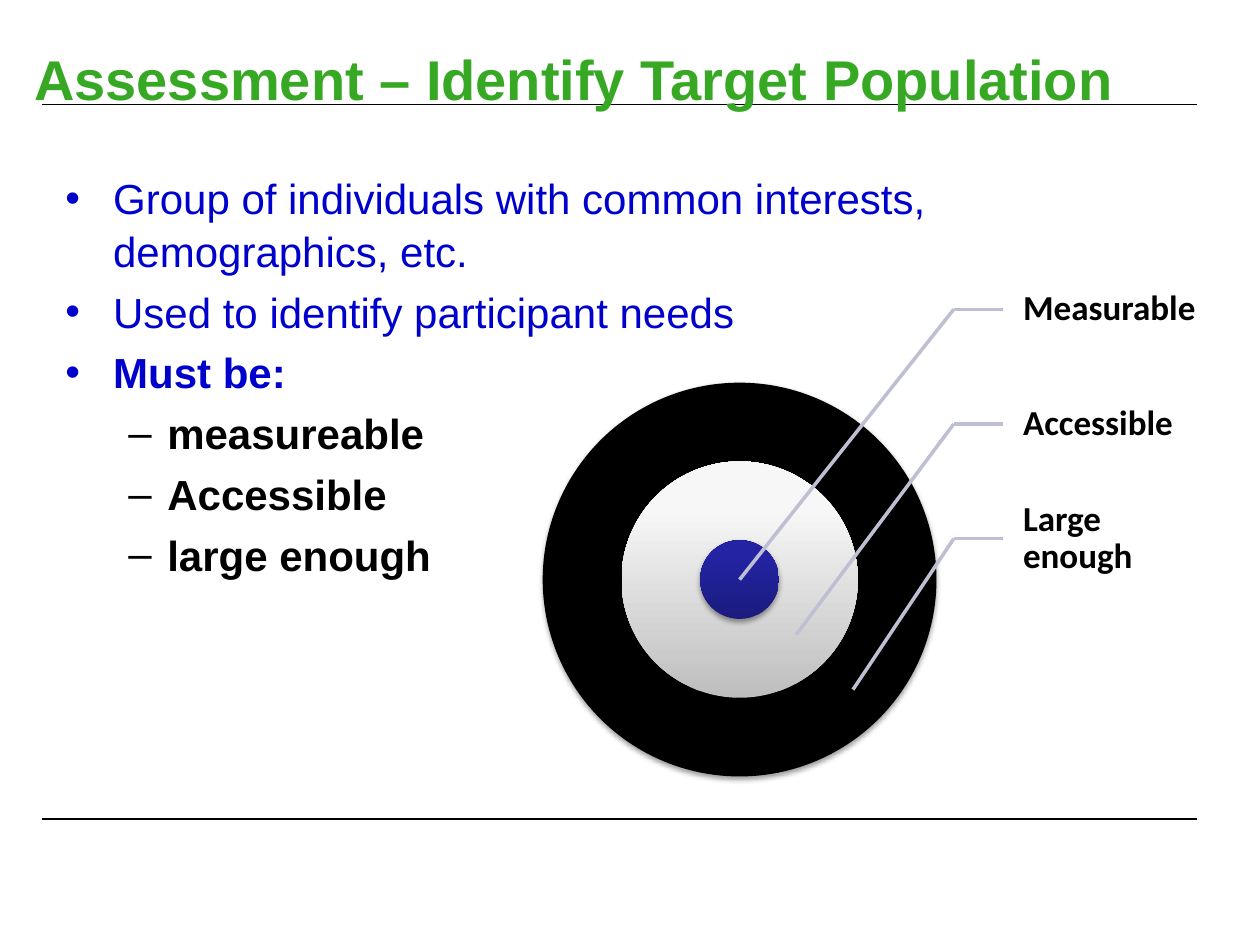
"""Build the target population slide with its bullet list and labelled target."""
from lxml.etree import SubElement
from pptx import Presentation
from pptx.dml.color import RGBColor
from pptx.enum.shapes import MSO_CONNECTOR as Connector, MSO_SHAPE as Shape
from pptx.enum.text import MSO_ANCHOR as Anchor, PP_ALIGN as Align
from pptx.oxml import parse_xml
from pptx.oxml.ns import nsdecls, qn
from pptx.util import Inches, Pt

WIDTH, HEIGHT = 10, 7.5
TITLE = "Assessment – Identify Target Population"
BULLETS = [
    (0, "Group of individuals with common interests, demographics, etc.", False),
    (0, "Used to identify participant needs", False),
    (0, "Must be:", True),
    (1, "measureable", True),
    (1, "Accessible", True),
    (1, "large enough", True),
]
LEVELS = [
    {"bullet": "•", "margin": 0.38, "indent": -0.38, "color": "0000CC"},
    {"bullet": "–", "margin": 0.81, "indent": -0.31, "color": "000000"},
]
RINGS = [(5, ["000000"]), (3, ["BEBEBE", "F7F7F7"]), (1, ["1B1B7E", "2323A3"])]
LABELS = ["Measurable", "Accessible", "Large enough"]
RULES = [0.83, 6.5]

CENTER_X, CENTER_Y, RING_UNIT = 5.87, 4.6, 0.625
LABEL_LEFT, LABEL_TOP, LABEL_WIDTH, LABEL_HEIGHT = 7.96, 2, 1.6, 0.91
ELBOW_X, TARGET_STEP = 7.57, 0.45


def rgb(color):
    return RGBColor.from_string(color)


def write(paragraph, text, size, color, font="Arial", bold=False, before=0, spacing=1):
    paragraph.alignment = Align.LEFT
    paragraph.space_before, paragraph.line_spacing = Pt(before), spacing
    run = paragraph.add_run()
    run.text = text
    run.font.name, run.font.size, run.font.bold = font, Pt(size), bold
    run.font.color.rgb = rgb(color)


def add_bullet(paragraph, bullet, margin, indent):
    properties = paragraph._p.get_or_add_pPr()
    properties.set("marL", str(Inches(margin)))
    properties.set("indent", str(Inches(indent)))
    SubElement(properties, qn("a:buFont")).set("typeface", "Arial")
    SubElement(properties, qn("a:buChar")).set("char", bullet)


def add_box(slide, left, top, width, height):
    box = slide.shapes.add_textbox(*map(Inches, (left, top, width, height)))
    box.text_frame.word_wrap = True
    return box


def add_line(slide, start, end, color, width):
    line = slide.shapes.add_connector(Connector.STRAIGHT, *map(Inches, start + end))
    line.line.color.rgb, line.line.width = rgb(color), Pt(width)
    SubElement(line._element.spPr, qn("a:effectLst"))
    return line


def add_title(slide):
    title = slide.shapes.title
    title.left, title.top, title.width, title.height = map(Inches, (0.17, 0.33, 9.83, 0.58))
    title.text_frame.vertical_anchor = Anchor.MIDDLE
    write(title.text_frame.paragraphs[0], TITLE, 32, "37A824", bold=True)
    for y in RULES:
        rule = add_line(slide, (0.33, y), (9.5, y), "000000", 0.75)
        slide.shapes._spTree.insert(2, rule._element)


def add_bullets(slide):
    frame = add_box(slide, 0.42, 1.3, 7.6, 3.4).text_frame
    for index, (level, text, bold) in enumerate(BULLETS):
        paragraph = frame.add_paragraph() if index else frame.paragraphs[0]
        style = LEVELS[level]
        paragraph.level = level
        add_bullet(paragraph, style["bullet"], style["margin"], style["indent"])
        write(paragraph, text, 24, style["color"], bold=bold,
              before=4.5 if index else 0, spacing=1.05)


def add_ring(slide, units, colors):
    size = units * RING_UNIT
    ring = slide.shapes.add_shape(Shape.OVAL, Inches(CENTER_X - size / 2),
                                  Inches(CENTER_Y - size / 2), Inches(size), Inches(size))
    ring.line.fill.background()
    if len(colors) == 1:
        ring.fill.solid()
        ring.fill.fore_color.rgb = rgb(colors[0])
    else:
        ring.fill.gradient()
        ring.fill.gradient_angle = 90
        for stop, color, position in zip(ring.fill.gradient_stops, colors, (0, 0.8)):
            stop.color.rgb, stop.position = rgb(color), position
    ring._element.spPr.append(parse_xml(
        f'<a:effectLst {nsdecls("a")}><a:outerShdw blurRad="{Pt(3.1)}" dist="{Pt(1.6)}" '
        'dir="5400000" rotWithShape="0"><a:srgbClr val="000000"><a:alpha val="38000"/>'
        '</a:srgbClr></a:outerShdw></a:effectLst>'))


def add_label(slide, index, text):
    top = LABEL_TOP + index * LABEL_HEIGHT
    middle = top + LABEL_HEIGHT / 2
    label = add_box(slide, LABEL_LEFT, top, LABEL_WIDTH, LABEL_HEIGHT)
    frame = label.text_frame
    frame.vertical_anchor = Anchor.MIDDLE
    frame.margin_left = Inches(0.16)
    frame.margin_top = frame.margin_right = frame.margin_bottom = Inches(0.03)
    write(frame.paragraphs[0], text, 20, "000000", font="Calibri", bold=True, spacing=0.9)
    elbow = (ELBOW_X, middle)
    target = (CENTER_X + index * TARGET_STEP, CENTER_Y + index * TARGET_STEP * 0.97)
    add_line(slide, elbow, (LABEL_LEFT, middle), "BFBFD4", 2).end_connect(label, 1)
    add_line(slide, elbow, target, "BFBFD4", 2)


def main():
    presentation = Presentation()
    presentation.slide_width, presentation.slide_height = Inches(WIDTH), Inches(HEIGHT)
    slide = presentation.slides.add_slide(presentation.slide_layouts[5])
    add_title(slide)
    add_bullets(slide)
    for units, colors in RINGS:
        add_ring(slide, units, colors)
    for index, text in enumerate(LABELS):
        add_label(slide, index, text)
    presentation.save("out.pptx")


if __name__ == "__main__":
    main()
